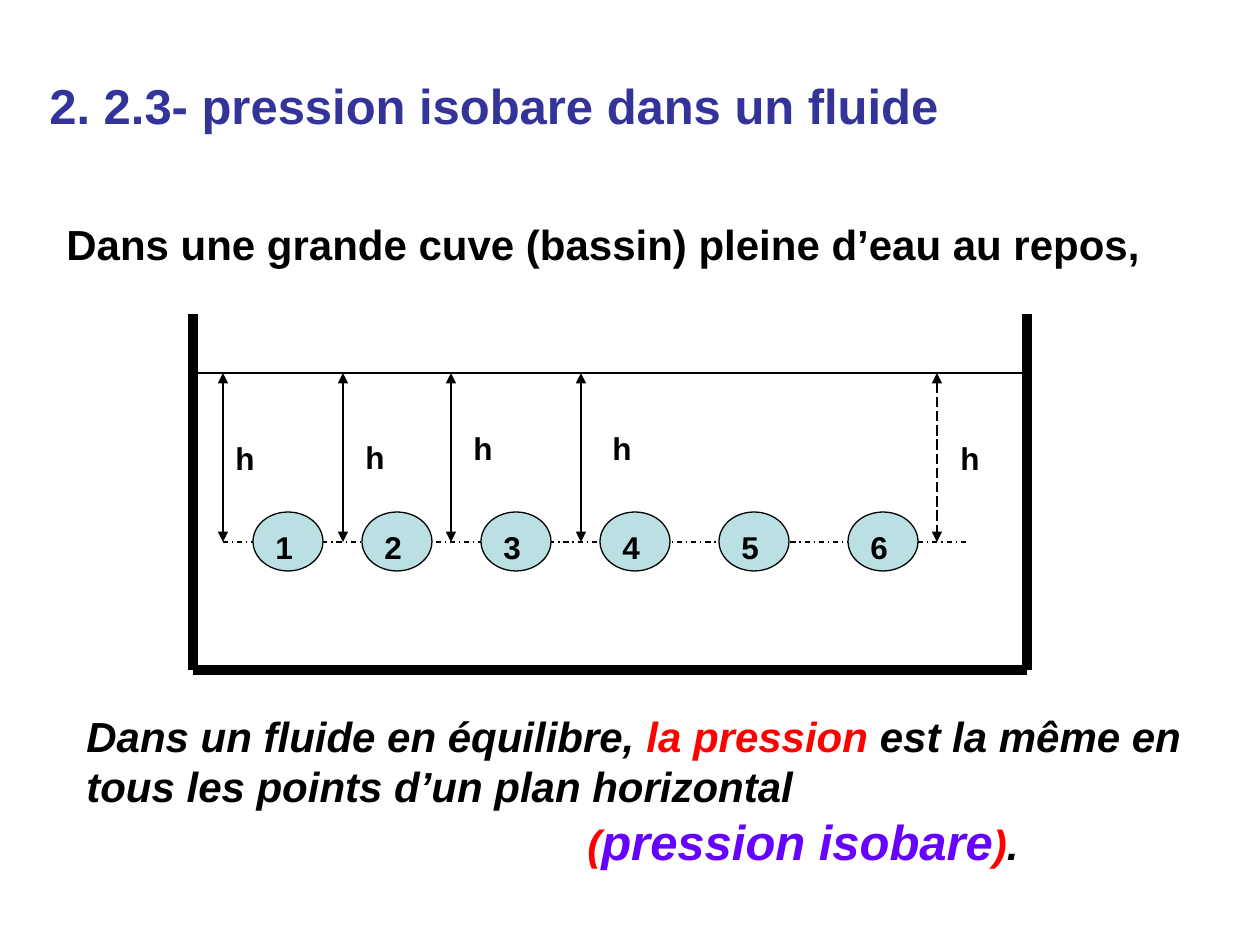
import pptx
import pptx.dml.color
import pptx.enum.dml
import pptx.enum.shapes
import pptx.enum.text
import pptx.oxml.ns
import pptx.util
from dataclasses import dataclass
from lxml import etree

EMU_PER_PX = 914400 / 126
BLACK = "000000"
RED = "FF0000"
DASH = pptx.enum.dml.MSO_LINE


@dataclass
class Ball:
    number: str
    x: int


@dataclass
class Depth:
    x: int
    label_x: int
    label_y: int
    dash: object = None


@dataclass
class Run:
    text: str
    color: str = BLACK
    size: int = 24


WALL_LEFT, WALL_RIGHT, WALL_TOP, FLOOR = 193, 1027, 314, 670
SURFACE, PLANE = 373, 542
BALL_W, BALL_H = 70, 59
LABEL_W, LABEL_H = 49, 50
BALLS = [Ball(str(n), x) for n, x in enumerate((253, 362, 481, 600, 719, 848), 1)]
DEPTHS = [
    Depth(223, 223, 433),
    Depth(343, 353, 432),
    Depth(451, 461, 423),
    Depth(581, 600, 423),
    Depth(937, 948, 433, DASH.LONG_DASH),
]


def px(n: int) -> int:
    return round(n * EMU_PER_PX)


def rgb(color: str) -> pptx.dml.color.RGBColor:
    return pptx.dml.color.RGBColor.from_string(color)


def add_text(shapes, paragraphs: list[list[Run]], x: int, y: int, w: int, h: int, *,
             italic: bool = False, middle: bool = True, indents: tuple = ()) -> None:
    anchor = pptx.enum.text.MSO_ANCHOR
    sp = shapes.add_textbox(px(x), px(y), px(w), px(h))
    tf = sp.text_frame
    tf.word_wrap = True
    tf.vertical_anchor = anchor.MIDDLE if middle else anchor.TOP
    for i, runs in enumerate(paragraphs):
        p = tf.add_paragraph() if i else tf.paragraphs[0]
        if i < len(indents):
            p._p.get_or_add_pPr().set("marL", str(px(indents[i])))
        for run in runs:
            r = p.add_run()
            r.text = run.text
            r.font.name = "Arial"
            r.font.size = pptx.util.Pt(run.size)
            r.font.bold = True
            r.font.italic = italic
            r.font.color.rgb = rgb(run.color)


def add_line(shapes, x1: int, y1: int, x2: int, y2: int, *, width: float = 0.75,
             dash=None, arrows: bool = False) -> None:
    sp = shapes.add_connector(pptx.enum.shapes.MSO_CONNECTOR.STRAIGHT,
                              px(x1), px(y1), px(x2), px(y2))
    sp.line.color.rgb = rgb(BLACK)
    sp.line.width = pptx.util.Pt(width)
    if dash is not None:
        sp.line.dash_style = dash
    if arrows:
        ln = sp.line._get_or_add_ln()
        for end in ("a:headEnd", "a:tailEnd"):
            etree.SubElement(ln, pptx.oxml.ns.qn(end), type="triangle")
    etree.SubElement(sp._element.spPr, pptx.oxml.ns.qn("a:effectLst"))


def add_ball(shapes, ball: Ball) -> None:
    sp = shapes.add_shape(pptx.enum.shapes.MSO_SHAPE.OVAL, px(ball.x),
                          px(PLANE - BALL_H // 2 - 1), px(BALL_W), px(BALL_H))
    sp.shadow.inherit = False
    sp.fill.solid()
    sp.fill.fore_color.rgb = rgb("BBE0E3")
    sp.line.color.rgb = rgb(BLACK)
    sp.line.width = pptx.util.Pt(0.75)


def add_label(shapes, text: str, x: int, y: int) -> None:
    add_text(shapes, [[Run(text, size=18)]], x, y, LABEL_W, LABEL_H, middle=False)


def add_tank(shapes) -> None:
    for x in (WALL_LEFT, WALL_RIGHT):
        add_line(shapes, x, WALL_TOP, x, FLOOR, width=6)
    add_line(shapes, WALL_LEFT, FLOOR, WALL_RIGHT, FLOOR, width=6)
    add_line(shapes, WALL_LEFT, SURFACE, WALL_RIGHT, SURFACE)
    add_line(shapes, 223, PLANE, 968, PLANE, dash=DASH.DASH_DOT)
    for ball in BALLS:
        add_ball(shapes, ball)
    for depth in DEPTHS:
        add_line(shapes, depth.x, SURFACE, depth.x, PLANE, dash=depth.dash, arrows=True)
    for depth in DEPTHS:
        add_label(shapes, "h", depth.label_x, depth.label_y)
    for ball in BALLS:
        add_label(shapes, ball.number, ball.x + 10, 522)


def main() -> None:
    prs = pptx.Presentation()
    prs.slide_width = pptx.util.Inches(10)
    prs.slide_height = pptx.util.Inches(7.5)
    s = prs.slides.add_slide(prs.slide_layouts[6])
    add_text(s.shapes, [[Run("Dans une grande cuve (bassin) pleine d’eau au repos,")]],
             54, 165, 1131, 158)
    add_tank(s.shapes.add_group_shape().shapes)
    conclusion = [
        [Run("Dans un fluide en équilibre,"), Run(" la pression ", RED),
         Run("est la même en tous les points d’un plan horizontal")],
        [Run("(", RED), Run("pression isobare", "6600FF", 28), Run(")", RED), Run(".")],
    ]
    add_text(s.shapes, conclusion, 74, 711, 1131, 158, italic=True, indents=(0, 501))
    add_text(s.shapes, [[Run("2. 2.3- pression isobare dans un fluide", "333399", 28)]],
             37, 26, 1134, 158)
    prs.save("out.pptx")


if __name__ == "__main__":
    main()
